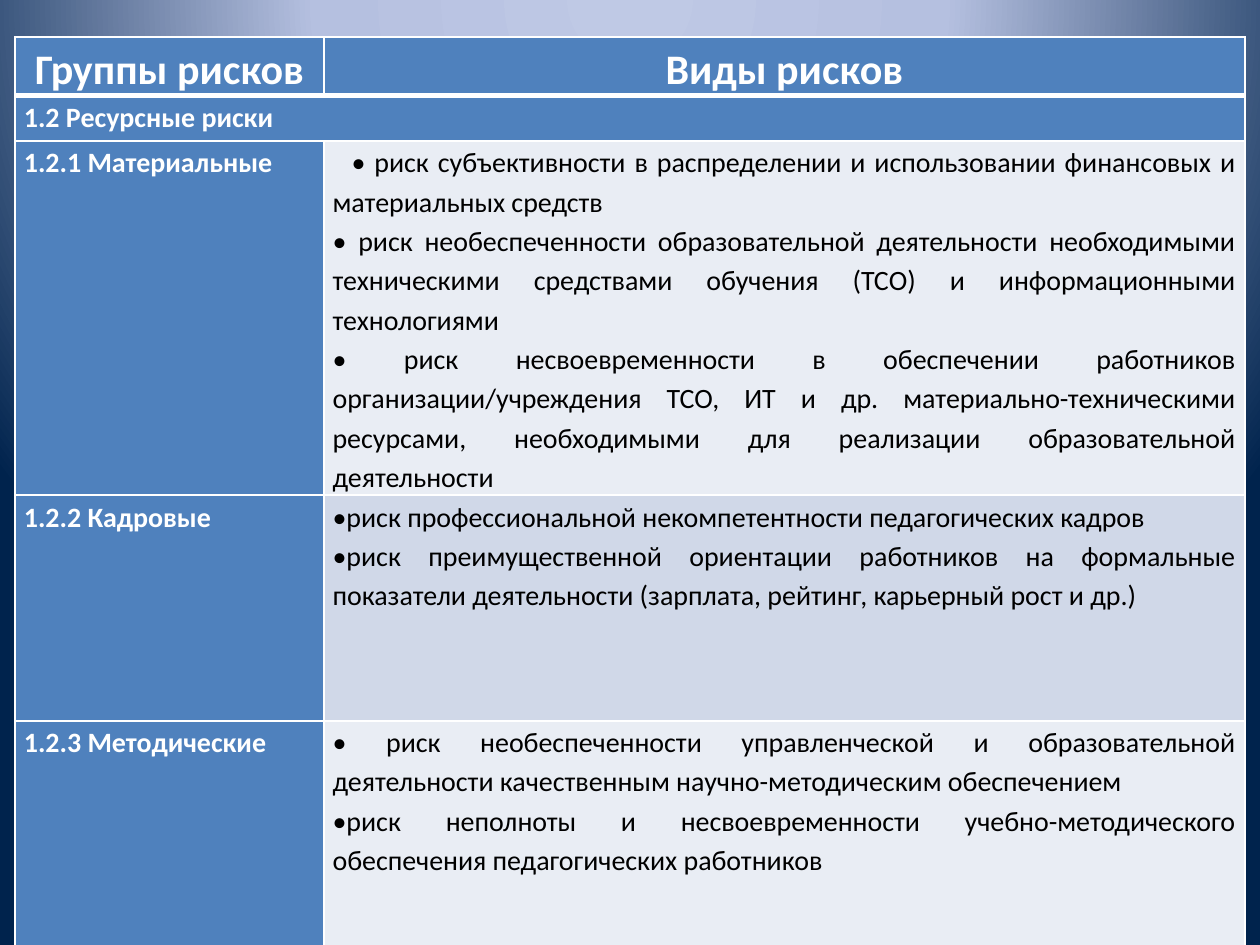
from pptx import Presentation
from pptx.dml.color import RGBColor
from pptx.enum import text
from pptx.oxml import parse_xml
from pptx.oxml.ns import nsdecls, qn
from pptx.util import Inches, Pt

COLORS = {
    "white": "FFFFFF", "black": "000000", "blue": "4F81BD",
    "pale": "E9EDF4", "tint": "D0D8E8",
    "glow": "BFC9E5", "haze": "B5C0E0", "navy": "00234D",
}
WIDTH, HEIGHT = Inches(10), Inches(7.5)
TABLE_BOX = (0.012, 0.039, 0.976, 0.947)  # shares of the slide
COLUMN_SHARES = (2.45, 7.31)
ROW_SHARES = (0.46, 0.36, 2.7, 1.79, 1.79)

HEADERS = ("Группы рисков", "Виды рисков")
SECTION = "1.2 Ресурсные риски"
RISKS = [
    ("1.2.1 Материальные", [
        "• риск субъективности в распределении и использовании финансовых и материальных средств",
        "• риск необеспеченности образовательной деятельности необходимыми техническими "
        "средствами обучения (ТСО) и информационными технологиями",
        "• риск несвоевременности в обеспечении работников организации/учреждения ТСО, ИТ и др. "
        "материально-техническими ресурсами, необходимыми для реализации образовательной "
        "деятельности"]),
    ("1.2.2 Кадровые", [
        "•риск профессиональной некомпетентности педагогических кадров",
        "•риск преимущественной ориентации работников на формальные показатели деятельности "
        "(зарплата, рейтинг, карьерный рост и др.)"]),
    ("1.2.3 Методические", [
        "• риск необеспеченности управленческой и образовательной деятельности качественным "
        "научно-методическим обеспечением",
        "•риск неполноты и несвоевременности учебно-методического обеспечения педагогических "
        "работников"]),
]


def paint_background(page):
    """Radial glow whose centre lies above the page."""
    page.background.fill.solid()
    stops = "".join(
        f'<a:gs pos="{share * 1000}"><a:srgbClr val="{COLORS[name]}"/></a:gs>'
        for share, name in ((0, "glow"), (40, "haze"), (100, "navy")))
    gradient = parse_xml(
        f'<a:gradFill {nsdecls("a")} rotWithShape="1"><a:gsLst>{stops}</a:gsLst>'
        '<a:path path="circle"><a:fillToRect l="50000" t="-80000" r="50000" b="180000"/>'
        '</a:path></a:gradFill>')
    solid = page.element.find(".//" + qn("p:bgPr")).find(qn("a:solidFill"))
    solid.getparent().replace(solid, gradient)


def draw_borders(cell, bottom=1):
    properties = cell._tc.get_or_add_tcPr()
    for index, (side, points) in enumerate((("L", 1), ("R", 1), ("T", 1), ("B", bottom))):
        properties.insert(index, parse_xml(
            f'<a:ln{side} {nsdecls("a")} w="{Pt(points)}"><a:solidFill>'
            f'<a:srgbClr val="{COLORS["white"]}"/></a:solidFill></a:ln{side}>'))


def fill_cell(cell, lines, fill="blue", color="white", size=16, bold=True,
              align=text.PP_ALIGN.LEFT, bottom=1):
    cell.margin_left = cell.margin_right = Inches(0.07)
    cell.margin_top = cell.margin_bottom = 0
    cell.fill.solid()
    cell.fill.fore_color.rgb = RGBColor.from_string(COLORS[fill])
    draw_borders(cell, bottom)
    cell.text = "\n".join(lines)
    for para in cell.text_frame.paragraphs:
        para.alignment = align
        para.line_spacing = 1.15
        para.font.name = "Calibri"
        para.font.size = Pt(size)
        para.font.bold = bold
        para.font.color.rgb = RGBColor.from_string(COLORS[color])


def share_out(tracks, shares, total, attribute):
    for track, share in zip(tracks, shares):
        setattr(track, attribute, int(total * share / sum(shares)))


def build_risk_table(page, box):
    left, top, width, height = box
    table = page.shapes.add_table(len(ROW_SHARES), len(COLUMN_SHARES), *box).table
    table.first_col = True
    share_out(table.columns, COLUMN_SHARES, width, "width")
    share_out(table.rows, ROW_SHARES, height, "height")

    # Header row
    for column, title in enumerate(HEADERS):
        fill_cell(table.cell(0, column), [title], size=24,
                  align=text.PP_ALIGN.CENTER, bottom=3)

    # Section row across both columns
    table.cell(1, 0).merge(table.cell(1, 1))
    fill_cell(table.cell(1, 0), [SECTION])

    # Risk groups with alternating tints
    for row, (group, risks) in enumerate(RISKS, start=2):
        fill_cell(table.cell(row, 0), [group])
        fill_cell(table.cell(row, 1), risks, fill=("pale", "tint")[row % 2],
                  color="black", bold=False, align=text.PP_ALIGN.JUSTIFY)

    # The first risk starts with an indent
    first = table.cell(2, 1).text_frame.paragraphs[0]
    first._p.get_or_add_pPr().set("indent", str(Inches(0.15)))


def main():
    deck = Presentation()
    deck.slide_width, deck.slide_height = WIDTH, HEIGHT
    page = deck.slides.add_slide(deck.slide_layouts[6])
    paint_background(page)
    box = [int(share * side) for share, side in zip(TABLE_BOX, (WIDTH, HEIGHT) * 2)]
    build_risk_table(page, box)
    deck.save("out.pptx")


if __name__ == "__main__":
    main()
